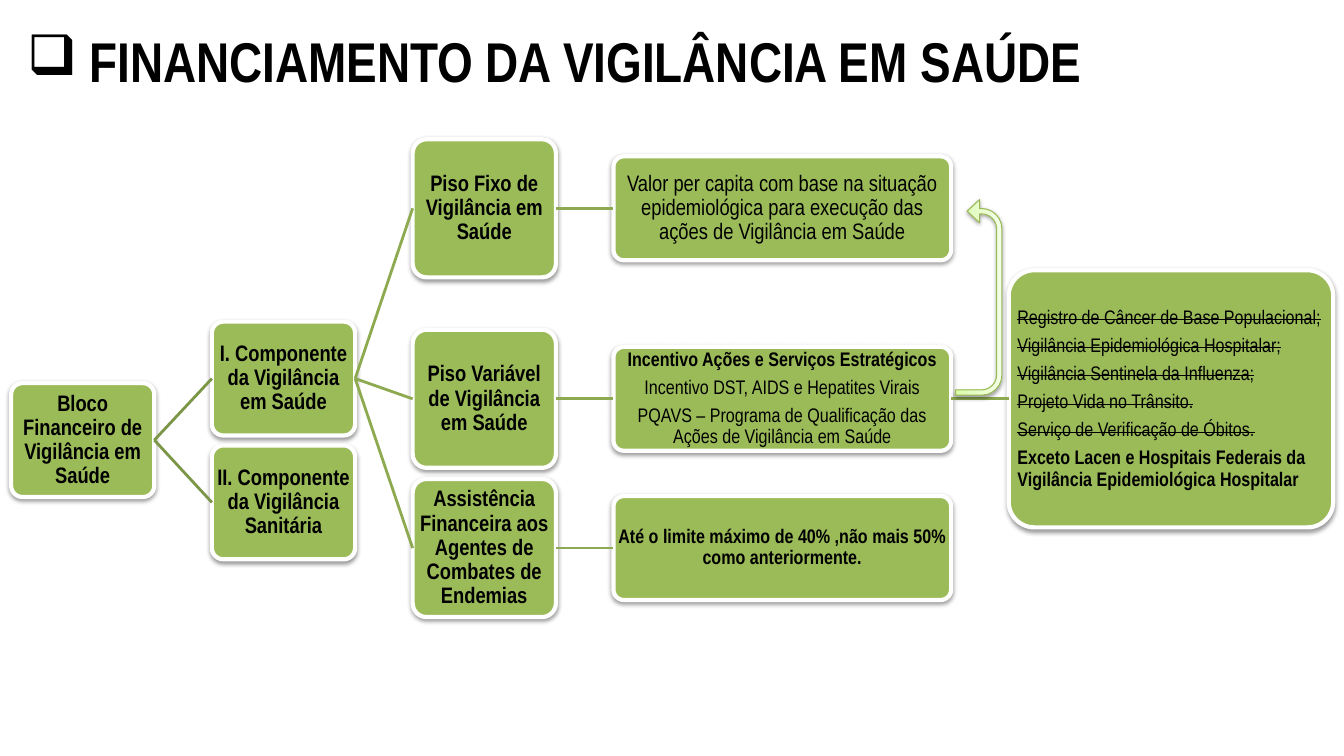
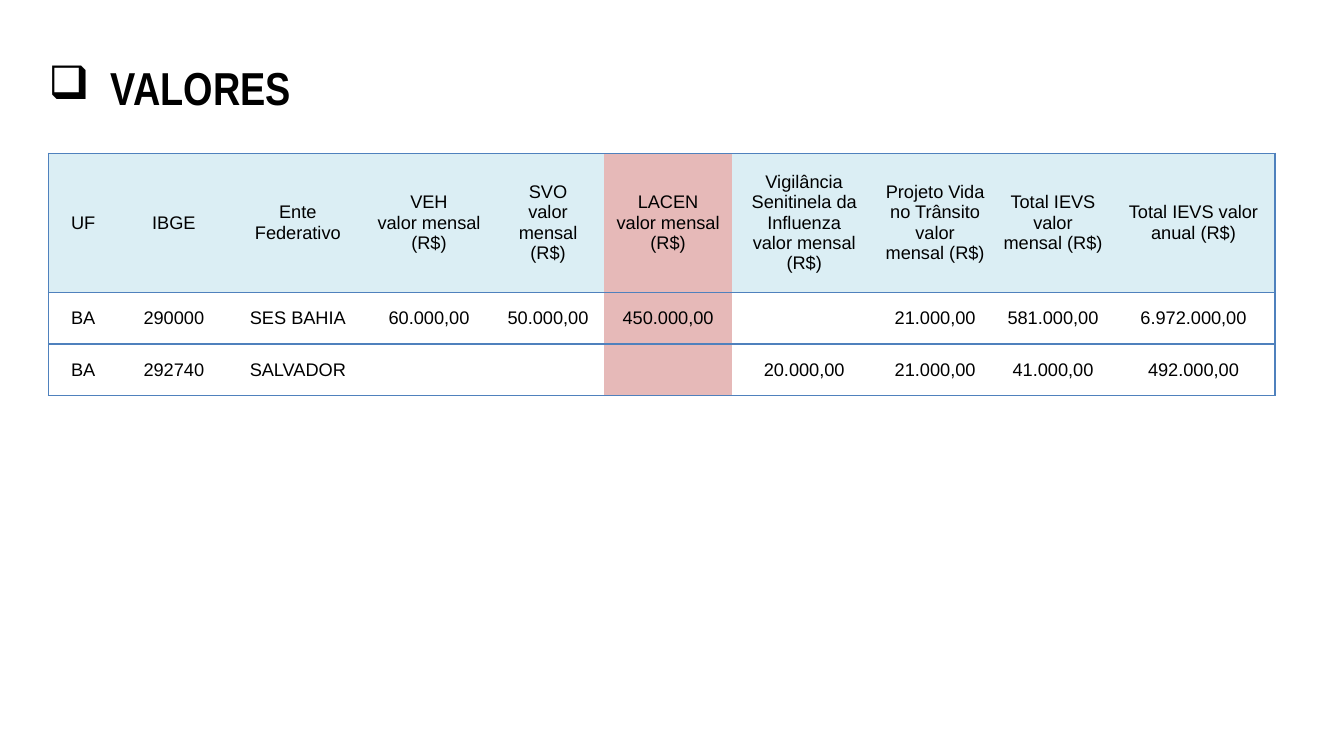
import copy
import dataclasses
import lxml.etree
import pptx
import pptx.dml.color
import pptx.enum.shapes
import pptx.enum.text
import pptx.oxml.ns
import pptx.util

Cm = pptx.util.Cm
Pt = pptx.util.Pt
ALIGN = pptx.enum.text.PP_ALIGN
MIDDLE = pptx.enum.text.MSO_ANCHOR.MIDDLE
SHAPE = pptx.enum.shapes.MSO_SHAPE

BLACK, WHITE, GREEN = "000000", "FFFFFF", "9BBB59"
BLUE, PALE, PINK = "4F81BD", "DBEEF4", "E6B9B8"
NARROW = "Arial Narrow"
PLAIN = "{2D5ABB26-0587-4C30-8999-92F81FD0307C}"

GAP = 1.45
SIZES = [(3.61, 2.87), (3.61, 2.87), (3.61, 3.48), (8.51, 2.62), (8.18, 6.48)]
LINKS = ["7C9647", "8DAA51", "8DAA51", "8DAA51"]
GLOW = [(0, "DAFDA7"), (0.35, "E4FCC2"), (1, "F5FFE7")]
BENDS = [0.114, 0.25, 0.269, 0.438, 0.75]


@dataclasses.dataclass
class Node:
    mid: float
    lines: list
    size: int = 16
    kids: tuple = ()


TREE = Node(7.58, [("b", "Bloco Financeiro de Vigilância em Saúde")], kids=(
    Node(6.03, [("b", "I. Componente da Vigilância em Saúde")], kids=(
        Node(1.74, [("b", "Piso Fixo de Vigilância em Saúde")], kids=(
            Node(1.74, [("", "Valor per capita com base na situação epidemiológica "
                             "para execução das ações de Vigilância em Saúde")]),)),
        Node(6.54, [("b", "Piso Variável de Vigilância em Saúde")], kids=(
            Node(6.54, [
                ("b", "Incentivo Ações e Serviços Estratégicos"),
                ("", "Incentivo DST, AIDS e Hepatites Virais"),
                ("", "PQAVS – Programa de Qualificação das Ações de Vigilância em Saúde"),
            ], 14, (
                Node(6.54, [
                    ("s", "Registro de Câncer de Base Populacional;"),
                    ("s", "Vigilância Epidemiológica Hospitalar;"),
                    ("s", "Vigilância Sentinela da Influenza;"),
                    ("s", "Projeto Vida no Trânsito."),
                    ("s", "Serviço de Verificação de Óbitos."),
                    ("b", "Exceto Lacen e Hospitais Federais da Vigilância "
                          "Epidemiológica Hospitalar"),
                ], 14),)),)),
        Node(10.3, [("b", "Assistência Financeira aos Agentes de Combates de Endemias")],
             kids=(Node(10.3, [("b", "Até o limite máximo de 40% ,não mais 50% "
                                     "como anteriormente.")], 14),)),
    )),
    Node(9.15, [("b", "II. Componente da Vigilância Sanitária")]),
))

WIDTHS = [1.75, 2.82, 3.43, 3.18, 2.82, 3.23, 3.63, 2.97, 2.97, 4.11]
HEIGHTS = [3.51, 1.3, 1.3]
MARKED = 5
ROWS = [
    ["UF", "IBGE", "Ente Federativo", "VEH\nvalor mensal (R$)",
     "SVO\nvalor mensal (R$)", "LACEN\nvalor mensal (R$)",
     "Vigilância Senitinela da Influenza\nvalor mensal (R$)",
     "Projeto Vida no Trânsito\nvalor mensal (R$)",
     "Total IEVS valor mensal (R$)", "Total IEVS valor anual (R$)"],
    ["BA", "290000", "SES BAHIA", "60.000,00", "50.000,00", "450.000,00",
     "", "21.000,00", "581.000,00", "6.972.000,00"],
    ["BA", "292740", "SALVADOR", "", "", "",
     "20.000,00", "21.000,00", "41.000,00", "492.000,00"],
]


def hue(code):
    return pptx.dml.color.RGBColor.from_string(code)


def put(thing, **values):
    for name, value in values.items():
        setattr(thing, name, value)


def tag(parent, name, **values):
    return lxml.etree.SubElement(parent, pptx.oxml.ns.qn("a:" + name), values)


def inset(thing, side, edge):
    put(thing, margin_left=Cm(side), margin_right=Cm(side),
        margin_top=Cm(edge), margin_bottom=Cm(edge))


def fill(thing, code):
    thing.fill.solid()
    thing.fill.fore_color.rgb = hue(code)


def stroke(shape, code, width):
    shape.line.color.rgb = hue(code)
    shape.line.width = Pt(width)


def style(run, face, size, bold=False):
    put(run.font, name=face, size=Pt(size), bold=bold)
    run.font.color.rgb = hue(BLACK)


def shade(shape):
    shape.shadow.inherit = False
    effects = shape._element.spPr.find(pptx.oxml.ns.qn("a:effectLst"))
    outer = tag(effects, "outerShdw", blurRad="40000", dist="20000",
                dir="5400000", rotWithShape="0")
    tag(tag(outer, "srgbClr", val=BLACK), "alpha", val="38000")


def title(slide, box, words, size, align):
    shape = slide.shapes.title
    left, top, width, height = map(Cm, box)
    put(shape, left=left, top=top, width=width, height=height)
    frame = shape.text_frame
    put(frame, text=words, word_wrap=True, vertical_anchor=MIDDLE,
        auto_size=pptx.enum.text.MSO_AUTO_SIZE.NONE)
    inset(frame, 0, 0)
    line = frame.paragraphs[0]
    props = line._p.get_or_add_pPr()
    put_in = {"marL": str(Cm(1.57)), "indent": str(-Cm(1.57))}
    for name, value in put_in.items():
        props.set(name, value)
    tag(tag(props, "buClr"), "srgbClr", val=BLACK)
    tag(props, "buChar", char="❑")
    put(line, alignment=align, line_spacing=0.93)
    style(line.runs[0], NARROW, size, True)


def card(slide, box, node, align):
    shape = slide.shapes.add_shape(SHAPE.ROUNDED_RECTANGLE, *map(Cm, box))
    shape.adjustments[0] = 0.1
    shade(shape)
    fill(shape, GREEN)
    stroke(shape, WHITE, 3)
    frame = shape.text_frame
    put(frame, word_wrap=True, vertical_anchor=MIDDLE)
    inset(frame, 0.03, 0.03)
    for index, (mark, words) in enumerate(node.lines):
        line = frame.add_paragraph() if index else frame.paragraphs[0]
        put(line, alignment=align, line_spacing=0.9, space_after=Pt(5))
        run = line.add_run()
        run.text = words
        style(run, NARROW, node.size, mark == "b")
        if mark == "s":
            run._r.get_or_add_rPr().set("strike", "sngStrike")
    return shape


def link(slide, start, end, code):
    line = slide.shapes.add_connector(
        pptx.enum.shapes.MSO_CONNECTOR.STRAIGHT, 0, 0, 0, 0)
    line.begin_connect(start, 3)
    line.end_connect(end, 1)
    stroke(line, code, 2)
    tag(line._element.spPr, "effectLst")


def branch(slide, left, top, node, level=0):
    width, height = SIZES[level]
    align = ALIGN.LEFT if level == len(SIZES) - 1 else ALIGN.CENTER
    shape = card(slide, (left, top + node.mid - height / 2, width, height), node, align)
    for kid in node.kids:
        child = branch(slide, left + width + GAP, top, kid, level + 1)
        link(slide, shape, child, LINKS[level])
    return shape


def arrow(slide, box):
    shape = slide.shapes.add_shape(SHAPE.U_TURN_ARROW, *map(Cm, box))
    for index, value in enumerate(BENDS):
        shape.adjustments[index] = value
    shape.rotation = 270
    props = shape._element.spPr
    props.find(pptx.oxml.ns.qn("a:xfrm")).set("flipV", "1")
    shade(shape)
    shape.fill.gradient()
    shape.fill.gradient_angle = 90
    stops = next(props.iter(pptx.oxml.ns.qn("a:gsLst")))
    stops.append(copy.deepcopy(stops[0]))
    for stop, (place, code) in zip(shape.fill.gradient_stops, GLOW):
        stop.position = place
        stop.color.rgb = hue(code)
    stroke(shape, "98B955", 0.75)


def chart(slide, left, top):
    branch(slide, left, top, TREE)
    arrow(slide, (left + 21.92, top + 3.4, 4.93, 1.17))


def edge(cell, sides):
    props = cell._tc.get_or_add_tcPr()
    for side in sides:
        line = tag(props, "ln" + side, w=str(Pt(1)))
        tag(tag(line, "solidFill"), "srgbClr", val=BLUE)


def grid(slide, left, top):
    frame = slide.shapes.add_table(
        len(ROWS), len(WIDTHS), Cm(left), Cm(top), Cm(sum(WIDTHS)), Cm(sum(HEIGHTS)))
    table = frame.table
    put(table, first_row=False, horz_banding=False)
    table._tbl.tblPr.find(pptx.oxml.ns.qn("a:tableStyleId")).text = PLAIN
    for column, width in zip(table.columns, WIDTHS):
        column.width = Cm(width)
    for row, height in zip(table.rows, HEIGHTS):
        row.height = Cm(height)
    last = len(WIDTHS) - 1
    for down, texts in enumerate(ROWS):
        for across, words in enumerate(texts):
            cell = table.cell(down, across)
            put(cell, text=words, vertical_anchor=MIDDLE)
            inset(cell, 0.19, 0.1)
            edge(cell, {0: "LTB", last: "RTB"}.get(across, "TB"))
            fill(cell, PINK if across == MARKED else WHITE if down else PALE)
            for line in cell.text_frame.paragraphs:
                line.alignment = ALIGN.CENTER
                for run in line.runs:
                    style(run, "Arial", 13)


def main():
    deck = pptx.Presentation()
    put(deck, slide_width=Cm(33.87), slide_height=Cm(19.05))
    layout = deck.slide_layouts[5]
    funds = deck.slides.add_slide(layout)
    title(funds, (0, 0.36, 27.94, 2.51), "FINANCIAMENTO DA VIGILÂNCIA EM SAÚDE",
          40, ALIGN.CENTER)
    chart(funds, 0.28, 3.51)
    values = deck.slides.add_slide(layout)
    title(values, (1.22, 0.23, 28.8, 4.09), "VALORES", 33, ALIGN.LEFT)
    grid(values, 1.22, 3.86)
    deck.save("out.pptx")


if __name__ == "__main__":
    main()
